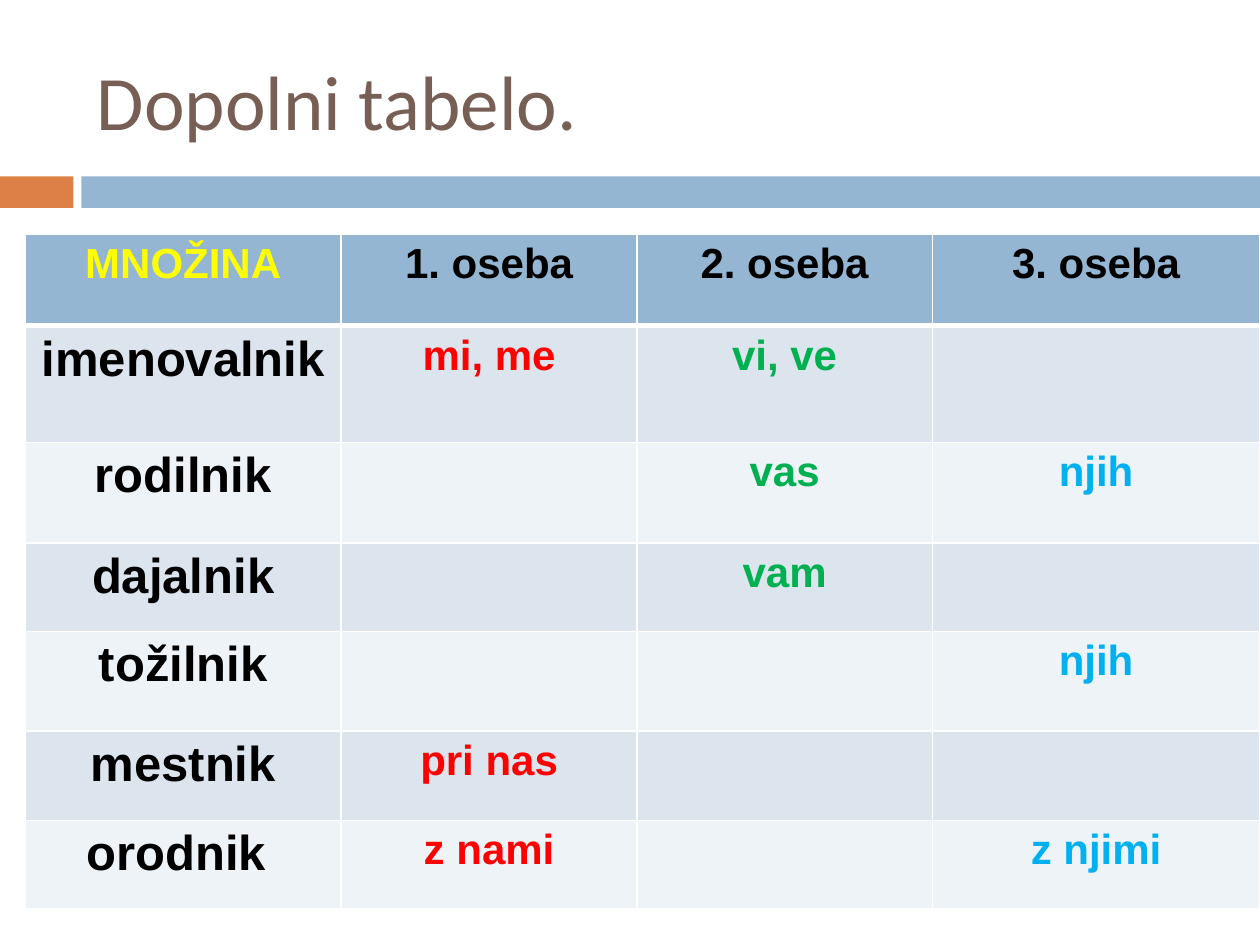
import pptx
import pptx.dml.color
import pptx.enum.shapes
import pptx.enum.text
import pptx.oxml
import pptx.oxml.ns
import pptx.util

Pt = pptx.util.Pt
RGBColor = pptx.dml.color.RGBColor

ORANGE = RGBColor(0xDD, 0x80, 0x47)
BLUE = RGBColor(0x94, 0xB6, 0xD2)
BROWN = RGBColor(0x77, 0x5F, 0x55)
BLACK = RGBColor(0, 0, 0)
YELLOW = RGBColor(0xFF, 0xFF, 0)
BAND_COLORS = (RGBColor(0xEE, 0xF3, 0xF7), RGBColor(0xDC, 0xE5, 0xEE))
PERSON_COLORS = (
    RGBColor(0xFF, 0, 0),
    RGBColor(0, 0xB0, 0x50),
    RGBColor(0, 0xB0, 0xF0),
)

COLUMN_WIDTHS = (180.6, 169, 168.8, 187.2)
ROW_HEIGHTS = (52.2, 66.6, 57.6, 50.4, 56.9, 51.1, 50.4)
PRONOUNS = (
    ("MNOŽINA", "1. oseba", "2. oseba", "3. oseba"),
    ("imenovalnik", "mi, me", "vi, ve", ""),
    ("rodilnik", "", "vas", "njih"),
    ("dajalnik", "", "vam", ""),
    ("tožilnik", "", "", "njih"),
    ("mestnik", "pri nas", "", ""),
    ("orodnik ", "z nami", "", "z njimi"),
)


def add_bar(slide, left, width, color):
    bar = slide.shapes.add_shape(
        pptx.enum.shapes.MSO_SHAPE.RECTANGLE, Pt(left), Pt(100.8), Pt(width), Pt(18)
    )
    bar.shadow.inherit = False
    bar.fill.solid()
    bar.fill.fore_color.rgb = color
    bar.line.fill.background()


def add_title(slide, text):
    title = slide.shapes.add_textbox(Pt(48.2), Pt(18), Pt(642.2), Pt(77.8))
    frame = title.text_frame
    frame.word_wrap = True
    frame.vertical_anchor = pptx.enum.text.MSO_ANCHOR.MIDDLE
    paragraph = frame.paragraphs[0]
    paragraph.text = text
    paragraph.font.name = "Calibri"
    paragraph.font.size = Pt(44)
    paragraph.font.color.rgb = BROWN


def set_borders(cell, row):
    """White lines all round, thicker between the header and the body."""
    widths = {
        "lnL": 1,
        "lnR": 1,
        "lnT": 3 if row == 1 else 1,
        "lnB": 3 if row == 0 else 1,
    }
    properties = cell._tc.get_or_add_tcPr()
    for index, (side, width) in enumerate(widths.items()):
        line = pptx.oxml.parse_xml(
            f'<a:{side} {pptx.oxml.ns.nsdecls("a")} w="{Pt(width)}">'
            '<a:solidFill><a:srgbClr val="FFFFFF"/></a:solidFill>'
            f"</a:{side}>"
        )
        properties.insert(index, line)


def text_color(row, column):
    if row == 0:
        return YELLOW if column == 0 else BLACK
    return BLACK if column == 0 else PERSON_COLORS[column - 1]


def fill_cell(cell, text, row, column):
    cell.fill.solid()
    cell.fill.fore_color.rgb = BLUE if row == 0 else BAND_COLORS[row % 2]
    set_borders(cell, row)
    paragraph = cell.text_frame.paragraphs[0]
    paragraph.text = text
    paragraph.alignment = pptx.enum.text.PP_ALIGN.CENTER
    paragraph.font.name = "Arial"
    paragraph.font.size = Pt(28 if row and column == 0 else 24)
    paragraph.font.bold = True
    paragraph.font.color.rgb = text_color(row, column)


def add_pronoun_table(slide):
    table = slide.shapes.add_table(
        len(ROW_HEIGHTS), len(COLUMN_WIDTHS), Pt(14.4), Pt(134),
        Pt(sum(COLUMN_WIDTHS)), Pt(sum(ROW_HEIGHTS)),
    ).table
    for column, width in zip(table.columns, COLUMN_WIDTHS):
        column.width = Pt(width)
    for row, height in zip(table.rows, ROW_HEIGHTS):
        row.height = Pt(height)
    for row, texts in enumerate(PRONOUNS):
        for column, text in enumerate(texts):
            fill_cell(table.cell(row, column), text, row, column)


def main():
    presentation = pptx.Presentation()
    presentation.slide_width = Pt(720)
    presentation.slide_height = Pt(540)
    slide = presentation.slides.add_slide(presentation.slide_layouts[6])
    add_bar(slide, 0, 42, ORANGE)
    add_bar(slide, 46.5, 673.5, BLUE)
    add_pronoun_table(slide)
    add_title(slide, "Dopolni tabelo.")
    presentation.save("out.pptx")


if __name__ == "__main__":
    main()
